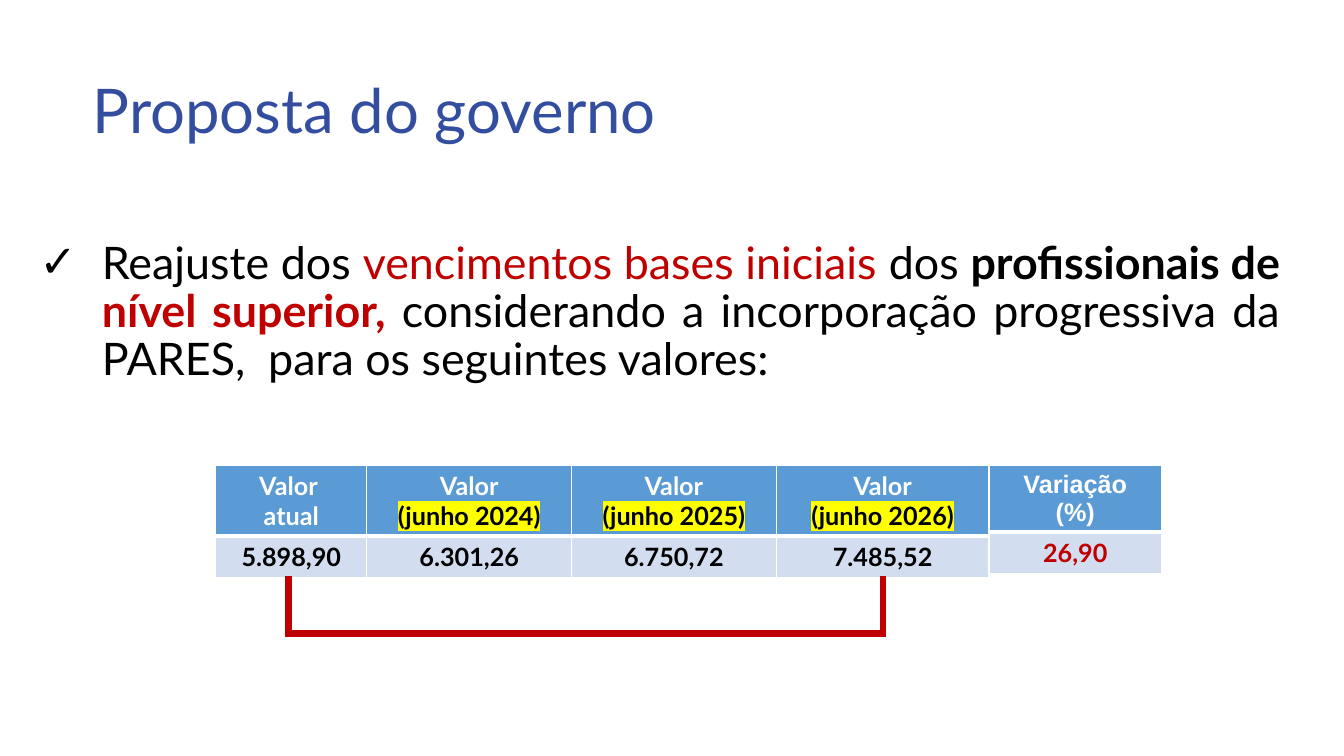
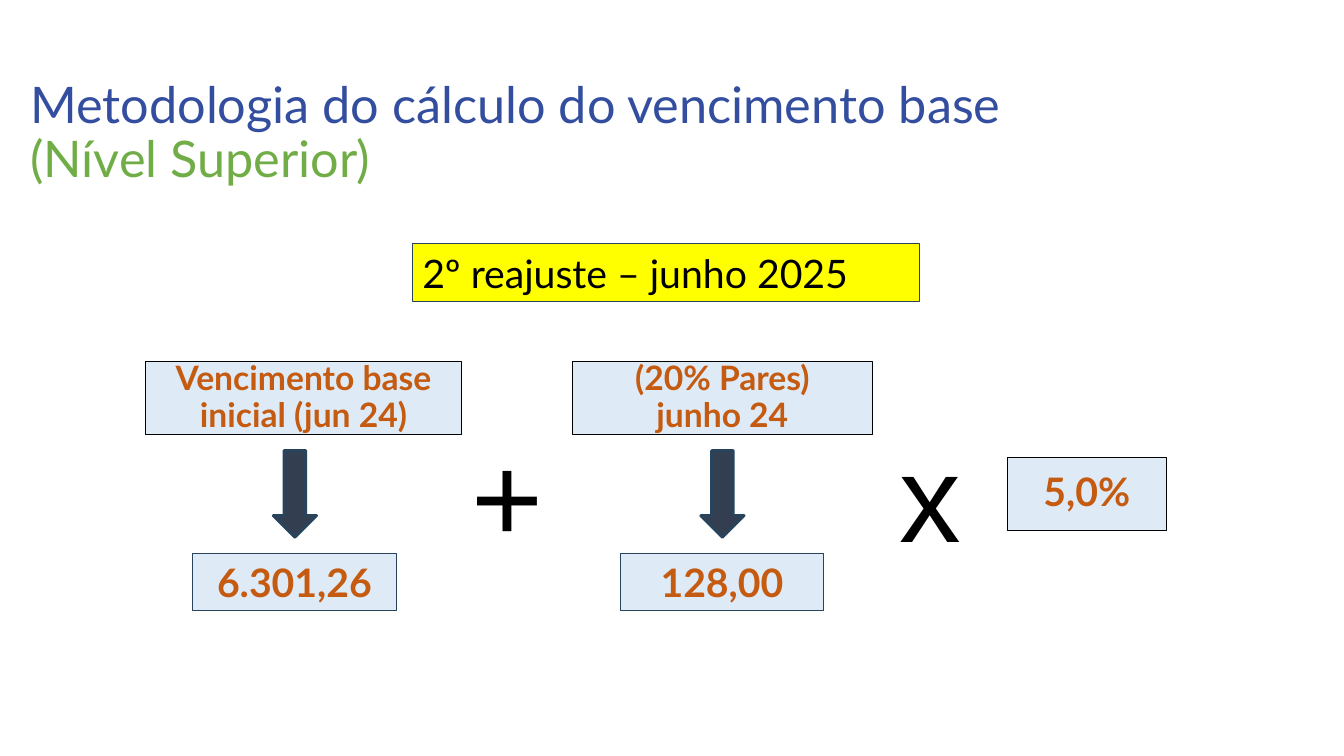
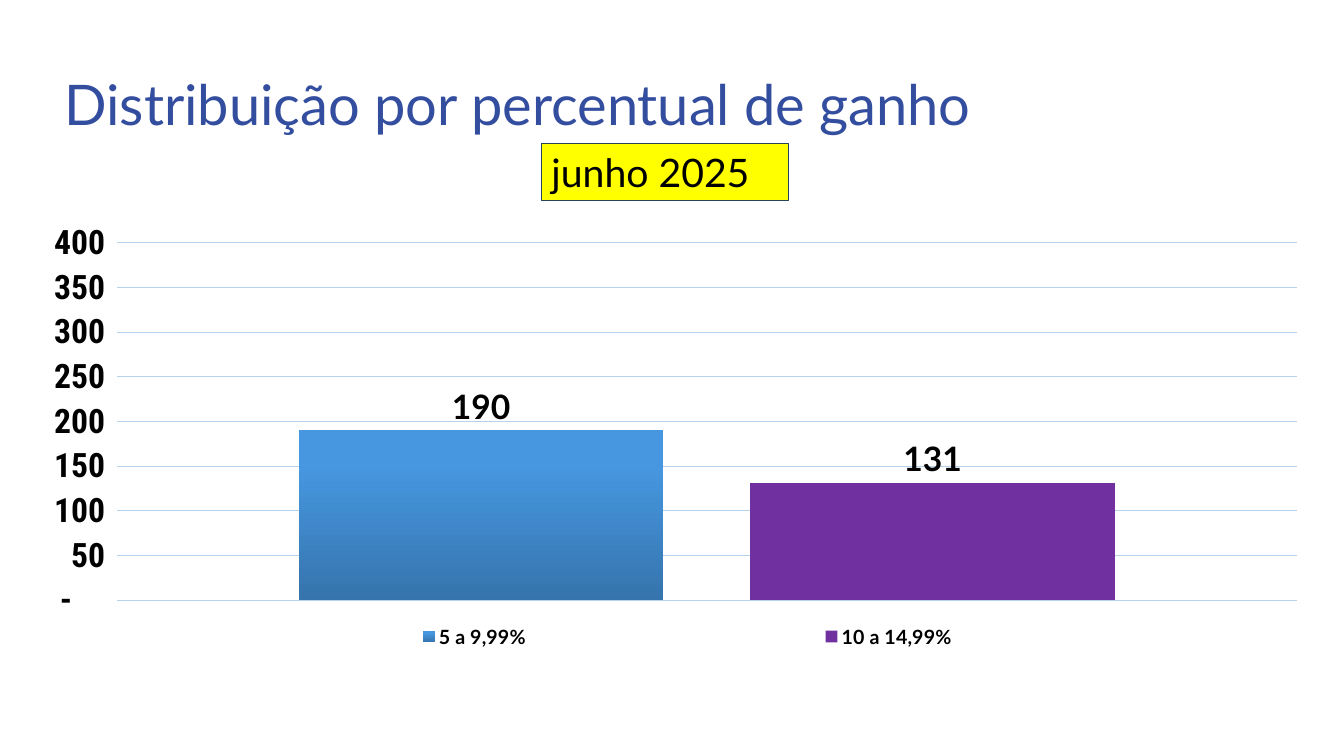
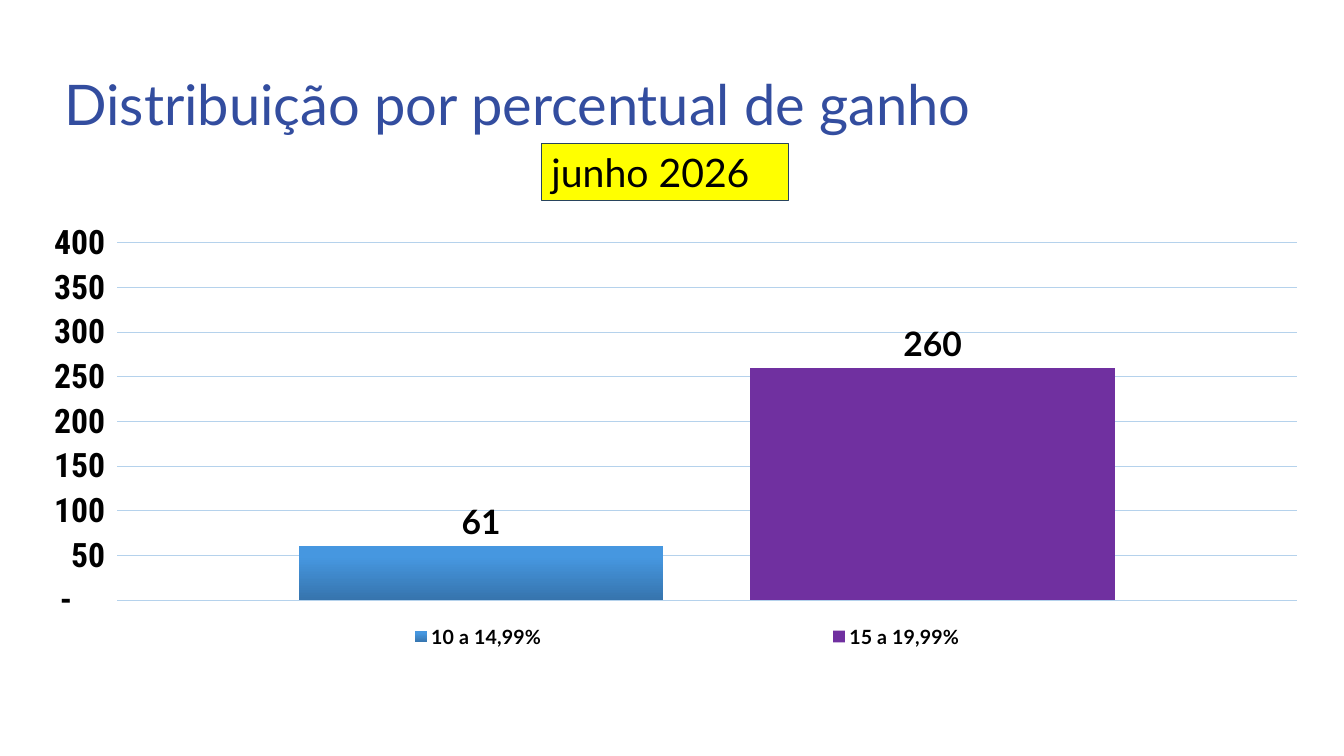
from copy import deepcopy
from dataclasses import dataclass
from typing import Optional, Sequence

from lxml.etree import SubElement
from pptx import Presentation
from pptx.chart.data import CategoryChartData
from pptx.dml.color import RGBColor as RGB
from pptx.enum.chart import XL_CHART_TYPE as CT, XL_LABEL_POSITION as LP
from pptx.enum.chart import XL_LEGEND_POSITION as LEG, XL_TICK_MARK as TICK
from pptx.enum.shapes import MSO_CONNECTOR as CON, MSO_SHAPE as SHP
from pptx.enum.text import MSO_ANCHOR as ANC, MSO_AUTO_SIZE as FIT, PP_ALIGN as AL
from pptx.oxml import parse_xml
from pptx.oxml.ns import nsdecls, qn
from pptx.util import Emu, Inches, Pt

SLIDE_W, SLIDE_H = Inches(13.33), Inches(7.5)


@dataclass(frozen=True)
class Theme:
    """Colours, fonts and type sizes of the deck."""
    title: str = "334D9F"
    green: str = "70AD47"
    black: str = "000000"
    white: str = "FFFFFF"
    red: str = "C00000"
    orange: str = "C55A11"
    yellow: str = "FFFF00"
    pale: str = "DEEBF7"
    outline: str = "28445D"
    arrow: str = "333F50"
    head: str = "5B9BD5"
    row: str = "D2DEEF"
    grid: str = "B5D2EC"
    bar_low: str = "3674AD"
    bar_high: str = "4697E0"
    purple: str = "7030A0"
    font: str = "Lato"
    plain_font: str = "Arial"
    axis_font: str = "Roboto Condensed"
    sign_size: int = 88
    body_size: int = 32
    box_size: int = 28
    label_size: int = 24
    cell_size: int = 18
    legend_size: int = 14


T = Theme()


@dataclass(frozen=True)
class Box:
    """A frame in percent of the slide's width and height."""
    left: float
    top: float
    width: float
    height: float

    def emu(self) -> tuple[Emu, Emu, Emu, Emu]:
        """Return the frame as slide lengths."""
        return across(self.left), down(self.top), across(self.width), down(self.height)


@dataclass(frozen=True)
class Run:
    """A stretch of text and what differs from its box's format."""
    text: str
    color: Optional[str] = None
    bold: Optional[bool] = None
    highlight: Optional[str] = None
    font: Optional[str] = None


@dataclass(frozen=True)
class Term:
    """One term of the formula: label, value and the sign after it."""
    label: str
    value: str
    sign: str
    label_width: float


@dataclass(frozen=True)
class Gain:
    """A chart slide: its month and its two bars."""
    month: str
    bars: tuple[tuple[str, int], tuple[str, int]]


Paras = Sequence[Sequence[Run]]


def across(share: float) -> Emu:
    """Convert a percent of the slide's width."""
    return Emu(round(SLIDE_W * share / 100))


def down(share: float) -> Emu:
    """Convert a percent of the slide's height."""
    return Emu(round(SLIDE_H * share / 100))


def style(font, size: float, color: str, bold: bool = False, name: str = T.font) -> None:
    """Set size, colour, weight and typeface of a font."""
    font.size, font.bold, font.name = Pt(size), bold, name
    font.color.rgb = RGB.from_string(color)


def write(tf, paras: Paras, *, size: float, color: str = T.black, bold: bool = False,
          font: str = T.font, align: AL = AL.LEFT, spacing: Optional[float] = None,
          bullet: Optional[str] = None, indent: float = 0) -> None:
    """Write paragraphs of runs; a newline is a line break."""
    for i, runs in enumerate(paras):
        p = tf.add_paragraph() if i else tf.paragraphs[0]
        if bullet:
            pPr = p._p.get_or_add_pPr()
            pPr.set("marL", str(across(indent)))
            pPr.set("indent", str(-across(indent)))
            SubElement(pPr, qn("a:buChar")).set("char", bullet)
        p.alignment = align
        p.space_before = Pt(0)
        if spacing:
            p.line_spacing = spacing
        for run in runs:
            for j, part in enumerate(run.text.split("\n")):
                if j:
                    p.add_line_break()
                    p._p[-1].append(deepcopy(r._r.rPr))
                if not part:
                    continue
                r = p.add_run()
                r.text = part
                style(r.font, size, run.color or color,
                      bold if run.bold is None else run.bold, run.font or font)
                if run.highlight:
                    r._r.rPr.find(qn("a:solidFill")).addnext(parse_xml(
                        f'<a:highlight {nsdecls("a")}><a:srgbClr val="{run.highlight}"/></a:highlight>'))


def frame(tf, inset: float = 0, wrap: bool = True, anchor: ANC = ANC.MIDDLE) -> None:
    """Set insets in inches, wrapping and anchor of a text frame."""
    tf.auto_size, tf.word_wrap, tf.vertical_anchor = FIT.NONE, wrap, anchor
    tf.margin_left = tf.margin_right = Inches(inset)
    tf.margin_top = tf.margin_bottom = Inches(inset / 2)


def fill_placeholder(ph, box: Box, paras: Paras, **fmt) -> None:
    """Move a placeholder and write its text."""
    ph.left, ph.top, ph.width, ph.height = box.emu()
    frame(ph.text_frame)
    write(ph.text_frame, paras, spacing=0.9, **fmt)


def new_slide(prs, layout: int, box: Box, title: Sequence[Run], size: float):
    """Add a slide with the shared title style."""
    s = prs.slides.add_slide(prs.slide_layouts[layout])
    fill_placeholder(s.shapes.title, box, [title], size=size, color=T.title)
    return s


def add_shape(s, kind: SHP, box: Box, fill: str, line: str, width: float = 0.75):
    """Add a flat preset shape."""
    sp = s.shapes.add_shape(kind, *box.emu())
    sp.shadow.inherit = False
    sp.fill.solid()
    sp.fill.fore_color.rgb = RGB.from_string(fill)
    sp.line.color.rgb = RGB.from_string(line)
    sp.line.width = Pt(width)
    return sp


def add_box(s, box: Box, text: str, fill: str = T.pale, line: str = T.outline,
            inset: float = 0.1, **fmt) -> None:
    """Add an outlined rectangle holding text."""
    sp = add_shape(s, SHP.RECTANGLE, box, fill, line)
    frame(sp.text_frame, inset)
    write(sp.text_frame, [[Run(text)]], **fmt)


def add_term_box(s, box: Box, text: str, size: float = T.box_size, **fmt) -> None:
    """Add a pale box with centred bold orange text."""
    add_box(s, box, text, size=size, color=T.orange, bold=True, align=AL.CENTER, **fmt)


def add_date(s, box: Box, text: str) -> None:
    """Add the yellow date box."""
    add_box(s, box, text, fill=T.yellow, size=T.box_size)


def set_borders(cell, bottom: float) -> None:
    """Draw white cell borders, with a bottom width of its own."""
    tcPr = cell._tc.get_or_add_tcPr()
    for i, (side, width) in enumerate((("L", 1), ("R", 1), ("T", 1), ("B", bottom))):
        tcPr.insert(i, parse_xml(
            f'<a:ln{side} {nsdecls("a")} w="{Pt(width)}"><a:solidFill>'
            f'<a:srgbClr val="{T.white}"/></a:solidFill></a:ln{side}>'))


def add_table(s, left: float, widths: Sequence[float], heads: Sequence[Paras],
              values: Sequence[Run]) -> None:
    """Add a two-row table of headings and values."""
    top, row_height = 61.6, 5.47
    box = Box(left, top, sum(widths), 2 * row_height)
    table = s.shapes.add_table(2, len(widths), *box.emu()).table
    table.horz_banding = False
    for col, width in zip(table.columns, widths):
        col.width = across(width)
    rows = ((heads, T.head, T.white, 3, ANC.MIDDLE),
            ([[[v]] for v in values], T.row, T.black, 1, ANC.TOP))
    for i, (texts, fill, color, bottom, anchor) in enumerate(rows):
        for j, paras in enumerate(texts):
            cell = table.cell(i, j)
            cell.vertical_anchor = anchor
            cell.fill.solid()
            cell.fill.fore_color.rgb = RGB.from_string(fill)
            set_borders(cell, bottom)
            write(cell.text_frame, paras, size=T.cell_size, color=color,
                  bold=True, align=AL.CENTER)


def add_bracket(s) -> None:
    """Join the first and last values by a red bracket."""
    left, right, top, bottom = 21.46, 65.72, 76.2, 83.8
    group = s.shapes.add_group_shape()
    for x1, y1, x2, y2 in ((left - 0.23, bottom, right + 0.23, bottom),
                           (left, top, left, bottom), (right, top, right, bottom)):
        line = group.shapes.add_connector(CON.STRAIGHT, across(x1), down(y1),
                                          across(x2), down(y2))
        line.line.color.rgb = RGB.from_string(T.red)
        line.line.width = Pt(4.5)
        SubElement(line._element.spPr, qn("a:effectLst"))


def proposal_slide(prs) -> None:
    """Build the slide on the government's proposal."""
    s = new_slide(prs, 1, Box(6.9, 5.33, 62.04, 19.33), [Run("Proposta do governo")], 44)
    fill_placeholder(s.placeholders[1], Box(2.93, 32.27, 92.35, 18.27), [[
        Run("Reajuste dos "), Run("vencimentos bases iniciais", T.red), Run(" dos "),
        Run("profissionais de", bold=True), Run(" nível superior, ", T.red, True),
        Run("considerando a incorporação progressiva da PARES,  para os seguintes valores:"),
    ]], size=T.body_size, align=AL.JUSTIFY, bullet="✓", indent=4.65)
    dated = [[[Run("Valor")], [Run(f"(junho {year})", T.black, highlight=T.yellow)]]
             for year in (2024, 2025, 2026)]
    add_table(s, 16.05, (11.25, 15.23, 15.23, 15.83),
              [[[Run("Valor ")], [Run("atual")]], *dated],
              [Run(v) for v in ("5.898,90", "6.301,26", "6.750,72", "7.485,52")])
    add_table(s, 73.59, (12.83,),
              [[[Run(t, font=T.plain_font)] for t in ("Variação", "(%)")]],
              [Run("26,90", T.red)])
    add_bracket(s)


def method_slide(prs) -> None:
    """Build the slide with the formula."""
    s = new_slide(prs, 5, Box(2.25, 8.67, 86.27, 18.13),
                  [Run("Metodologia do cálculo do vencimento base\n"),
                   Run("(Nível Superior)", T.green)], 36)
    add_date(s, Box(30.68, 32.27, 37.73, 7.6), "2º reajuste – junho 2025")
    terms = (Term("Vencimento base\ninicial (jun 24)", "6.301,26", "+", 23.56),
             Term("(20% Pares)\njunho 24", "128,00", "x", 22.28))
    pitch = 31.81
    for i, term in enumerate(terms):
        x = 10.8 + i * pitch
        add_term_box(s, Box(x, 47.87, term.label_width, 9.6), term.label, T.label_size,
                     line=T.black, inset=0, spacing=0.9)
        add_shape(s, SHP.DOWN_ARROW, Box(x + 9.53, 59.6, 3.23, 11.47),
                  T.arrow, T.outline, 2)
        add_term_box(s, Box(x + 3.53, 73.2, 15.15, 7.6), term.value)
        sign = s.shapes.add_textbox(*Box(x + 23.56, 54.8, 6.9, 21.07).emu())
        frame(sign.text_frame, 0.1, wrap=False, anchor=ANC.TOP)
        write(sign.text_frame, [[Run(term.sign)]], size=T.sign_size, font=T.plain_font)
    add_term_box(s, Box(74.94, 60.53, 11.85, 9.6), "5,0%",
                 line=T.black, inset=0, spacing=0.9)


def set_layout(parent, after: str, x: float, y: float, w: float, h: float,
               inner: bool = False) -> None:
    """Place a chart part by shares of the chart's size."""
    for old in parent.findall(qn("c:layout")):
        parent.remove(old)
    target = '<c:layoutTarget val="inner"/>' if inner else ""
    layout = parse_xml(
        f'<c:layout {nsdecls("c")}><c:manualLayout>{target}'
        '<c:xMode val="edge"/><c:yMode val="edge"/>'
        f'<c:x val="{x}"/><c:y val="{y}"/><c:w val="{w}"/><c:h val="{h}"/>'
        '</c:manualLayout></c:layout>')
    anchor = parent.find(qn(after)) if after else None
    if anchor is None:
        parent.insert(0, layout)
    else:
        anchor.addnext(layout)


def format_axes(chart) -> None:
    """Format the value axis and hide the category axis."""
    chart.category_axis.visible = False
    axis = chart.value_axis
    axis.minimum_scale, axis.maximum_scale, axis.major_unit = 0, 400, 50
    axis.major_tick_mark = axis.minor_tick_mark = TICK.NONE
    axis.format.line.fill.background()
    axis.major_gridlines.format.line.color.rgb = RGB.from_string(T.grid)
    axis.major_gridlines.format.line.width = Pt(0.75)
    labels = axis.tick_labels
    labels.number_format = '_-* #,##0_-;\\-* #,##0_-;_-* "-"??_-;_-@_'
    labels.number_format_is_linked = False
    style(labels.font, T.label_size, T.black, True, T.axis_font)


def format_bars(plot) -> None:
    """Colour the two bars and label their values."""
    plot.gap_width, plot.overlap, plot.vary_by_categories = 100, -24, False
    first, second = (series.format.fill for series in plot.series)
    first.gradient()
    first.gradient_angle = 90
    for stop, color, position in zip(first.gradient_stops, (T.bar_low, T.bar_high), (0, 0.8)):
        stop.color.rgb = RGB.from_string(color)
        stop.position = position
    second.solid()
    second.fore_color.rgb = RGB.from_string(T.purple)
    for series in plot.series:
        labels = series.data_labels
        labels.show_value = True
        labels.position = LP.OUTSIDE_END
        labels.number_format, labels.number_format_is_linked = "#,##0", False
        style(labels.font, T.label_size, T.black, True)


def gain_slide(prs, gain: Gain) -> None:
    """Build a slide on the distribution of gains."""
    s = new_slide(prs, 5, Box(4.8, 7.6, 78.02, 13.33),
                  [Run("Distribuição por percentual de ganho")], 40)
    data = CategoryChartData()
    data.categories = ["1"]
    for name, value in gain.bars:
        data.add_series(name, [value])
    chart = s.shapes.add_chart(CT.COLUMN_CLUSTERED,
                               *Box(1.95, 28.53, 96.47, 59.87).emu(), data).chart
    chart.has_title = False
    style(chart.font, 16, T.black, True, T.axis_font)
    format_axes(chart)
    format_bars(chart.plots[0])
    chart.has_legend = True
    legend = chart.legend
    legend.position, legend.include_in_layout = LEG.BOTTOM, False
    style(legend.font, T.legend_size, T.black, True)
    set_layout(legend._element, "c:legendPos", 0.08, 0.88, 0.86, 0.1)
    set_layout(chart._chartSpace.chart.plotArea, "", 0.07, 0.06, 0.91, 0.79, inner=True)
    add_date(s, Box(40.29, 18.93, 18.38, 7.6), gain.month)


def main() -> None:
    """Build and save the deck."""
    prs = Presentation()
    prs.slide_width, prs.slide_height = SLIDE_W, SLIDE_H
    proposal_slide(prs)
    method_slide(prs)
    for gain in (Gain("junho 2025", (("5 a 9,99%", 190), ("10 a 14,99%", 131))),
                 Gain("junho 2026", (("10 a 14,99%", 61), ("15 a 19,99%", 260)))):
        gain_slide(prs, gain)
    prs.save("out.pptx")


if __name__ == "__main__":
    main()
